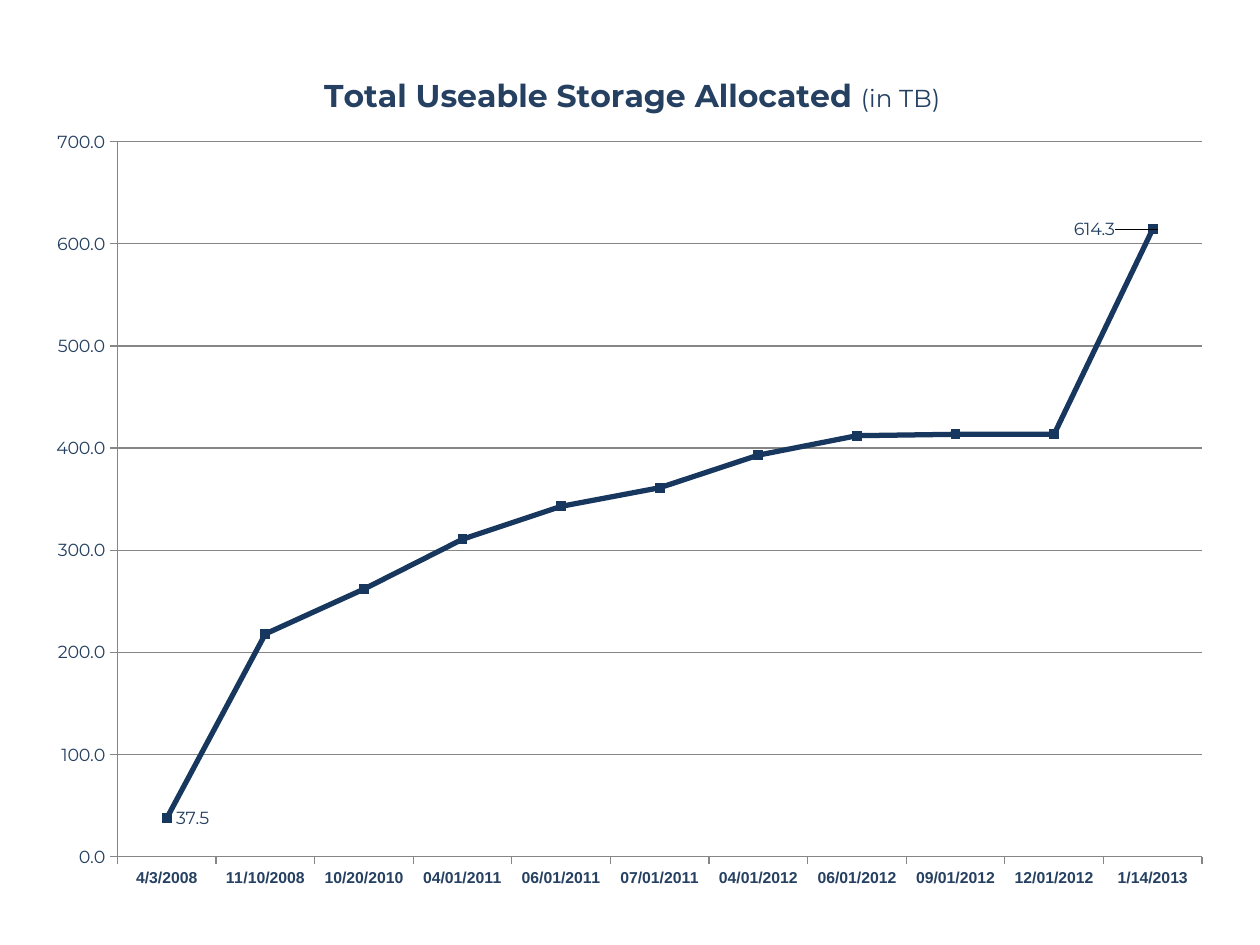
import pptx
import pptx.chart.data
import pptx.dml.color
import pptx.enum.chart
import pptx.oxml
import pptx.oxml.ns
import pptx.util

NAVY, LINE_BLUE, GREY = "254061", "17375E", "868686"
DATES = ["4/3/2008", "11/10/2008", "10/20/2010", "04/01/2011", "06/01/2011", "07/01/2011",
         "04/01/2012", "06/01/2012", "09/01/2012", "12/01/2012", "1/14/2013"]
TERABYTES = [37.5, 218, 261.9, 310.7, 342.9, 361.1, 393.1, 412.1, 413.5, 413.5, 614.3]
CHART_NS = 'xmlns:c="http://schemas.openxmlformats.org/drawingml/2006/chart"'
LEADER_NS = "http://schemas.microsoft.com/office/drawing/2012/chart"


def colour(value):
    return pptx.dml.color.RGBColor.from_string(value)


def layout(**shares):
    """Manual chart layout; all lengths are shares of the chart's size."""
    modes = {"x": "edge", "y": "edge"} if shares.pop("edge", True) else {}
    target = '<c:layoutTarget val="inner"/>' if "w" in shares else ""
    parts = [f'<c:{key}Mode val="{mode}"/>' for key, mode in modes.items()]
    parts += [f'<c:{key} val="{share}"/>' for key, share in shares.items()]
    return pptx.oxml.parse_xml(f"<c:layout {CHART_NS}><c:manualLayout>{target}"
                               f"{''.join(parts)}</c:manualLayout></c:layout>")


def place(element, new_layout, after=None):
    """Put a layout into a chart part, replacing any it has."""
    for old in element.findall(pptx.oxml.ns.qn("c:layout")):
        element.remove(old)
    before = element.find(pptx.oxml.ns.qn(after)) if after else None
    element.insert(0 if before is None else element.index(before) + 1, new_layout)


class ChartPage:
    def __init__(self, deck):
        self.deck = deck
        self.page = deck.slides.add_slide(deck.slide_layouts[6])
        self.body = {"name": "Montserrat", "size": 10, "bold": False}

    def style(self, font, **changes):
        for key, value in {**self.body, **changes}.items():
            setattr(font, key, pptx.util.Pt(value) if key == "size" else value)
        font.color.rgb = colour(NAVY)

    def line(self, line_format, shade, width):
        line_format.color.rgb = colour(shade)
        line_format.width = pptx.util.Pt(width)

    def chart(self, left, top, width, height, categories, values):
        data = pptx.chart.data.CategoryChartData()
        data.categories = categories
        data.add_series("Series 1", values)
        across, down = self.deck.slide_width, self.deck.slide_height
        frame = self.page.shapes.add_chart(
            pptx.enum.chart.XL_CHART_TYPE.LINE_MARKERS, int(left * across), int(top * down),
            int(width * across), int(height * down), data)
        chart = frame.chart
        chart.has_legend = False
        self.style(chart.font)
        chart.plots[0].vary_by_categories = False
        plot_area = chart._chartSpace.chart.plotArea
        place(plot_area, layout(x=0.071, y=0.119, w=0.909, h=0.826))
        return chart

    def title(self, chart, spans):
        chart.has_title = True
        chart.chart_title.include_in_layout = False
        para = chart.chart_title.text_frame.paragraphs[0]
        for text, size, bold in spans:
            span = para.add_run()
            span.text = text
            self.style(span.font, size=size, bold=bold)
        place(chart.chart_title._element, layout(x=0.241, y=0.037), "c:tx")

    def axis(self, axis, **font):
        axis.major_tick_mark = pptx.enum.chart.XL_TICK_MARK.OUTSIDE
        axis.minor_tick_mark = pptx.enum.chart.XL_TICK_MARK.NONE
        self.line(axis.format.line, GREY, 0.75)
        self.style(axis.tick_labels.font, **font)

    def value_axis(self, axis, top, step):
        self.axis(axis)
        axis.minimum_scale, axis.maximum_scale, axis.major_unit = 0, top, step
        axis.has_major_gridlines = True
        self.line(axis.major_gridlines.format.line, GREY, 0.75)
        axis.tick_labels.number_format = "0.0"
        axis.tick_labels.number_format_is_linked = False

    def series(self, series):
        series.smooth = False
        self.line(series.format.line, LINE_BLUE, 3)
        series.marker.style = pptx.enum.chart.XL_MARKER_STYLE.SQUARE
        series.marker.size = 5
        series.marker.format.fill.solid()
        series.marker.format.fill.fore_color.rgb = colour(LINE_BLUE)
        self.line(series.marker.format.line, LINE_BLUE, 0.75)

    def point_label(self, series, index, shift=None):
        label = series.points[index].data_label
        self.style(label.font)
        label.position = pptx.enum.chart.XL_LABEL_POSITION.RIGHT
        if shift:
            place(label._get_or_add_dLbl(), layout(edge=False, x=shift, y=0), "c:idx")

    def leader_lines(self, series):
        series.data_labels.show_value = False
        series.data_labels._element.append(pptx.oxml.parse_xml(
            f'<c:extLst {CHART_NS}><c:ext uri="{{CE6537A1-D6FC-4f65-9D91-7224C49458BB}}" '
            f'xmlns:c15="{LEADER_NS}"><c15:showLeaderLines val="1"/></c:ext></c:extLst>'))


def main():
    deck = pptx.Presentation()
    deck.slide_width, deck.slide_height = pptx.util.Inches(10), pptx.util.Inches(7.5)
    page = ChartPage(deck)

    # Chart and its title
    chart = page.chart(0.026, 0.041, 0.947, 0.916, DATES, TERABYTES)
    page.title(chart, [("Total Useable Storage Allocated ", 18, True), ("(in TB)", 14, False)])

    # Axes
    page.axis(chart.category_axis, name="Arial", size=9, bold=True)
    page.value_axis(chart.value_axis, 700, 100)

    # Line, with labels on the first and last points
    storage = chart.plots[0].series[0]
    page.series(storage)
    page.point_label(storage, 0)
    page.point_label(storage, len(DATES) - 1, shift=-0.074)
    page.leader_lines(storage)

    deck.save("out.pptx")


if __name__ == "__main__":
    main()
